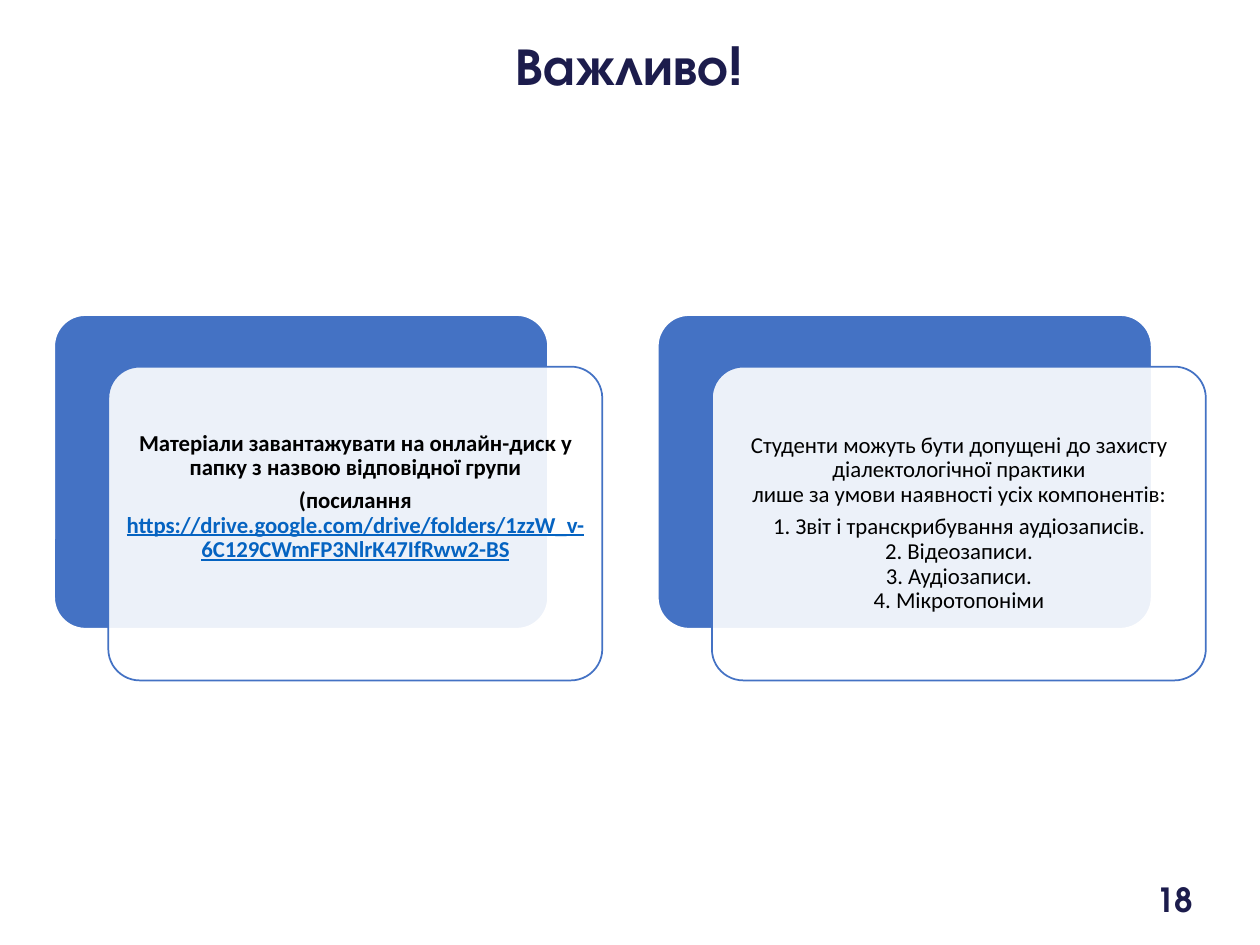
from lxml import etree
from pptx import Presentation
from pptx.dml.color import RGBColor
from pptx.enum.shapes import MSO_SHAPE
from pptx.enum.text import MSO_ANCHOR, PP_ALIGN
from pptx.oxml.ns import qn
from pptx.util import Inches, Pt

ROUND = MSO_SHAPE.ROUNDED_RECTANGLE
MIDDLE = MSO_ANCHOR.MIDDLE
CENTER, RIGHT = PP_ALIGN.CENTER, PP_ALIGN.RIGHT
HEAD, BODY = "TeX Gyre Adventor", "Calibri"
COLORS = {"navy": "1C1C4C", "blue": "4472C4", "white": "FFFFFF",
          "black": "000000", "link": "0563C1"}

CARD_W, CARD_H = 3.92, 2.49
SHIFT_X, SHIFT_Y = 0.43, 0.41
LEFT, TOP, STEP = 0.43, 2.5, 4.79

# Each card: bold flag, bottom inset, paragraphs as lists of runs
CARDS = [
    (True, 0.47, [
        ["Матеріали завантажувати на онлайн-диск у папку з назвою "
         "відповідної групи"],
        ["(посилання ",
         "https://drive.google.com/drive/folders/"
         "1zzW_v-6C129CWmFP3NlrK47IfRww2-BS"],
    ]),
    (False, 0.05, [
        ["Студенти можуть бути допущені до захисту діалектологічної практики"
         "\vлише за умови наявності усіх компонентів:"],
        ["1. Звіт і транскрибування аудіозаписів.\v2. Відеозаписи."
         "\v3. Аудіозаписи.\v4. Мікротопоніми"],
    ]),
]


def color(name):
    return RGBColor.from_string(COLORS[name])


def style(run, face, size, hue, bold):
    font = run.font
    font.name, font.size, font.bold = face, Pt(size), bold
    font.color.rgb = color(hue)


def place(shape, left, top, width, height):
    shape.left, shape.top = Inches(left), Inches(top)
    shape.width, shape.height = Inches(width), Inches(height)


def label(shape, text, size, align):
    """Set one bold line in the heading font."""
    frame = shape.text_frame
    frame.text = text
    frame.word_wrap = True
    frame.vertical_anchor = MIDDLE
    para = frame.paragraphs[0]
    para.alignment, para.line_spacing = align, 0.9
    style(para.runs[0], HEAD, size, "navy", True)


def panel(slide, left, top, fill, line):
    box = slide.shapes.add_shape(ROUND, Inches(left), Inches(top),
                                 Inches(CARD_W), Inches(CARD_H))
    box.adjustments[0] = 0.1
    box.shadow.inherit = False
    box.fill.solid()
    box.fill.fore_color.rgb = color(fill)
    box.line.color.rgb = color(line)
    box.line.width = Pt(1)
    return box


def fade(shape, percent):
    """Set the opacity of a solid fill."""
    tone = shape.fill._xPr.find(qn("a:solidFill"))[0]
    etree.SubElement(tone, qn("a:alpha")).set("val", str(percent * 1000))


def card(slide, left, top, bold, bottom, paras):
    panel(slide, left, top, "blue", "white")
    front = panel(slide, left + SHIFT_X, top + SHIFT_Y, "white", "blue")
    fade(front, 90)
    frame = front.text_frame
    frame.word_wrap = True
    frame.vertical_anchor = MIDDLE
    frame.margin_left = frame.margin_right = frame.margin_top = Inches(0.05)
    frame.margin_bottom = Inches(bottom)
    for i, parts in enumerate(paras):
        para = frame.add_paragraph() if i else frame.paragraphs[0]
        para.text = parts[0]
        para.alignment, para.line_spacing = CENTER, 0.9
        para.space_after = Pt(4.6)
        for part in parts[1:]:
            para.add_run().text = part
        for run in para.runs:
            link = run.text.startswith("https")
            style(run, BODY, 13, "link" if link else "black", bold)
            run.font.underline = link


def main():
    deck = Presentation()
    deck.slide_width, deck.slide_height = Inches(10), Inches(7.5)
    slide = deck.slides.add_slide(deck.slide_layouts[5])
    title = slide.shapes.title
    place(title, 1.91, 0.24, 6.17, 0.61)
    label(title, "Важливо!", 30, CENTER)
    for i, (bold, bottom, paras) in enumerate(CARDS):
        card(slide, LEFT + i * STEP, TOP, bold, bottom, paras)
    number = slide.shapes.add_textbox(Inches(7.32), Inches(6.96),
                                      Inches(2.25), Inches(0.4))
    label(number, "18", 19, RIGHT)
    deck.save("out.pptx")


if __name__ == "__main__":
    main()
